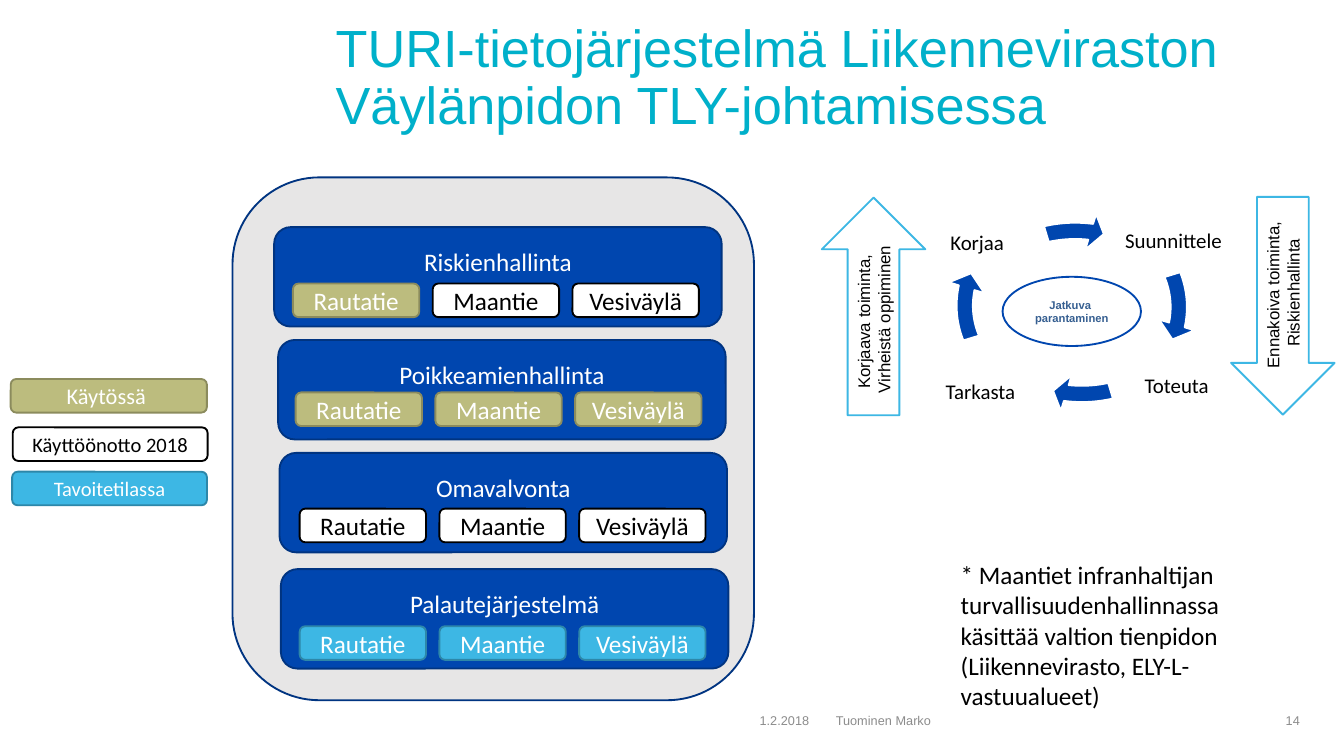
from pptx import Presentation
from pptx.dml.color import RGBColor
from pptx.enum.shapes import MSO_SHAPE as Shape
from pptx.enum.text import MSO_ANCHOR as Anchor, PP_ALIGN as Align
from pptx.util import Inches, Pt

presentation = Presentation()
presentation.slide_width = Inches(10)
presentation.slide_height = presentation.slide_width * 9 // 16
slide = presentation.slides.add_slide(presentation.slide_layouts[6])

# The grid has 100 columns across the slide; rows are as tall as columns are wide
CELL = presentation.slide_width // 100
color = RGBColor.from_string

WHITE, BLACK, BLUE, NAVY, SKY = "FFFFFF", "000000", "0046AF", "003481", "3DB7E4"
IN_USE = ("BCBC7E", "8B8B5D", WHITE)
ROLLOUT = (WHITE, BLACK, BLACK)
TARGET = (SKY, "2D87A9", WHITE)
TIGHT = dict.fromkeys(("margin_left", "margin_right", "margin_top", "margin_bottom"), CELL // 5)
SNUG = dict(margin_left=Inches(0.07), margin_right=Inches(0.07),
            margin_top=Inches(0.04), margin_bottom=Inches(0.04))


def add_item(box, kind=None, fill=None, line=None):
    """Add a shape, or a text box when no kind is given."""
    place = [int(value * CELL) for value in box]
    if kind is None:
        return slide.shapes.add_textbox(*place)
    shape = slide.shapes.add_shape(kind, *place)
    shape.shadow.inherit = False
    shape.fill.solid()
    shape.fill.fore_color.rgb = color(fill)
    shape.line.color.rgb = color(line)
    shape.line.width = Pt(1)
    return shape


def write(shape, lines, size, ink, name="Calibri", align=Align.CENTER,
          spacing=1.0, bold=False, **frame_format):
    frame = shape.text_frame
    frame_format = {"word_wrap": True, "vertical_anchor": Anchor.MIDDLE, **frame_format}
    for key, value in frame_format.items():
        setattr(frame, key, value)
    frame.text = lines
    for paragraph in frame.paragraphs:
        paragraph.alignment = align
        paragraph.line_spacing = spacing
        for key, value in dict(size=Pt(size), name=name, bold=bold).items():
            setattr(paragraph.font, key, value)
        paragraph.font.color.rgb = color(ink)


# Title
write(add_item((24, 3.4, 72.4, 5)),
      "TURI-tietojärjestelmä Liikenneviraston Väylänpidon TLY-johtamisessa",
      28, "00B0CA", "Arial", Align.LEFT, 0.9)

# Footer
for text, left, width, align in (
    ("1.2.2018", 52.1, 9.1, Align.RIGHT),
    ("Tuominen Marko", 61.2, 31.9, Align.LEFT),
    ("14", 93.6, 4.1, Align.RIGHT),
):
    write(add_item((left, 52.1, width, 3)), text, 6.8, "8C8C8C", "Arial", align)

# Legend
for text, left, top, width, size, (fill, line, ink) in (
    ("Käytössä ", 0.8, 28.2, 14.6, 12, IN_USE),
    ("Käyttöönotto 2018", 0.95, 31.8, 14.5, 11, ROLLOUT),
    ("Tavoitetilassa", 0.9, 35.1, 14.5, 11, TARGET),
):
    write(add_item((left, top, width, 2.5), Shape.ROUNDED_RECTANGLE, fill, line), text, size, ink)

# System modules, each with one chip per transport mode
add_item((17.3, 13.2, 38.8, 38.9), Shape.ROUNDED_RECTANGLE, "E7E6E6", NAVY)
for name, left, top, chip_left, chip_top, states in (
    ("Riskienhallinta", 20.4, 16.9, 21.8, 21.1, (IN_USE, ROLLOUT, ROLLOUT)),
    ("Poikkeamienhallinta", 20.7, 25.3, 22, 29.2, (IN_USE,) * 3),
    ("Omavalvonta", 20.8, 33.7, 22.3, 37.85, (ROLLOUT,) * 3),
    ("Palautejärjestelmä", 20.9, 42.35, 22.3, 46.6, (TARGET,) * 3),
):
    module = add_item((left, top, 33.3, 7.4), Shape.ROUNDED_RECTANGLE, BLUE, NAVY)
    write(module, name, 13.5, WHITE, margin_bottom=Inches(0.28))
    for column, mode in enumerate(("Rautatie", "Maantie", "Vesiväylä")):
        fill, line, ink = states[column]
        chip = add_item((chip_left + column * 10.4, chip_top, 9.4, 2.5),
                        Shape.ROUNDED_RECTANGLE, fill, line)
        write(chip, mode, 13.5, ink)

# Footnote
write(add_item((70.5, 41.15, 22.5, 12.4)),
      "* Maantiet infranhaltijan turvallisuudenhallinnassa käsittää valtion tienpidon "
      "(Liikennevirasto, ELY-L-vastuualueet)",
      13.5, BLACK, align=Align.LEFT, vertical_anchor=Anchor.TOP)

# Improvement cycle: arrows a quarter turn apart (a full turn is 216 units)
for quarter, (left, top) in enumerate(((69.5, 14.2), (70.7, 13.4), (70.4, 14.1), (70.2, 15.8))):
    arrow = add_item((left, top, 19.6, 17.3), Shape.CIRCULAR_ARROW, BLUE, WHITE)
    head = 5.49 + 54 * quarter
    for index, value in enumerate((0.07, 4.65, head, (head - 15.63) % 216, 0.08)):
        arrow.adjustments[index] = value

for text, box in (
    ("Suunnittele", (83.35, 14.05, 7.9, 7.9)),
    ("Toteuta", (84.1, 25.75, 6.9, 6.1)),
    ("Tarkasta", (69.5, 26.15, 6.9, 6.1)),
    ("Korjaa", (68.75, 14.2, 7.9, 7.9)),
):
    write(add_item(box), text, 11.2, BLACK, spacing=0.9, **TIGHT)

write(add_item((74.6, 20.6, 10.3, 5.15), Shape.OVAL, WHITE, BLUE),
      "Jatkuva \nparantaminen", 6, "365F91", "Arial", bold=True, **SNUG)

# Corrective and proactive arrows with upright-turned text
for text, left, top, rotation, direction in (
    ("Korjaava toiminta, \nVirheistä oppiminen", 61.15, 14.7, 0, "vert270"),
    ("Ennakoiva toiminta, \nRiskienhallinta", 91.6, 14.65, 180, "vert"),
):
    arrow = add_item((left, top, 7.7, 16.2), Shape.UP_ARROW, WHITE, SKY)
    arrow.rotation = rotation
    write(arrow, text, 9, BLACK, "Arial", **SNUG)
    arrow.text_frame._txBody.bodyPr.set("vert", direction)

presentation.save("out.pptx")
